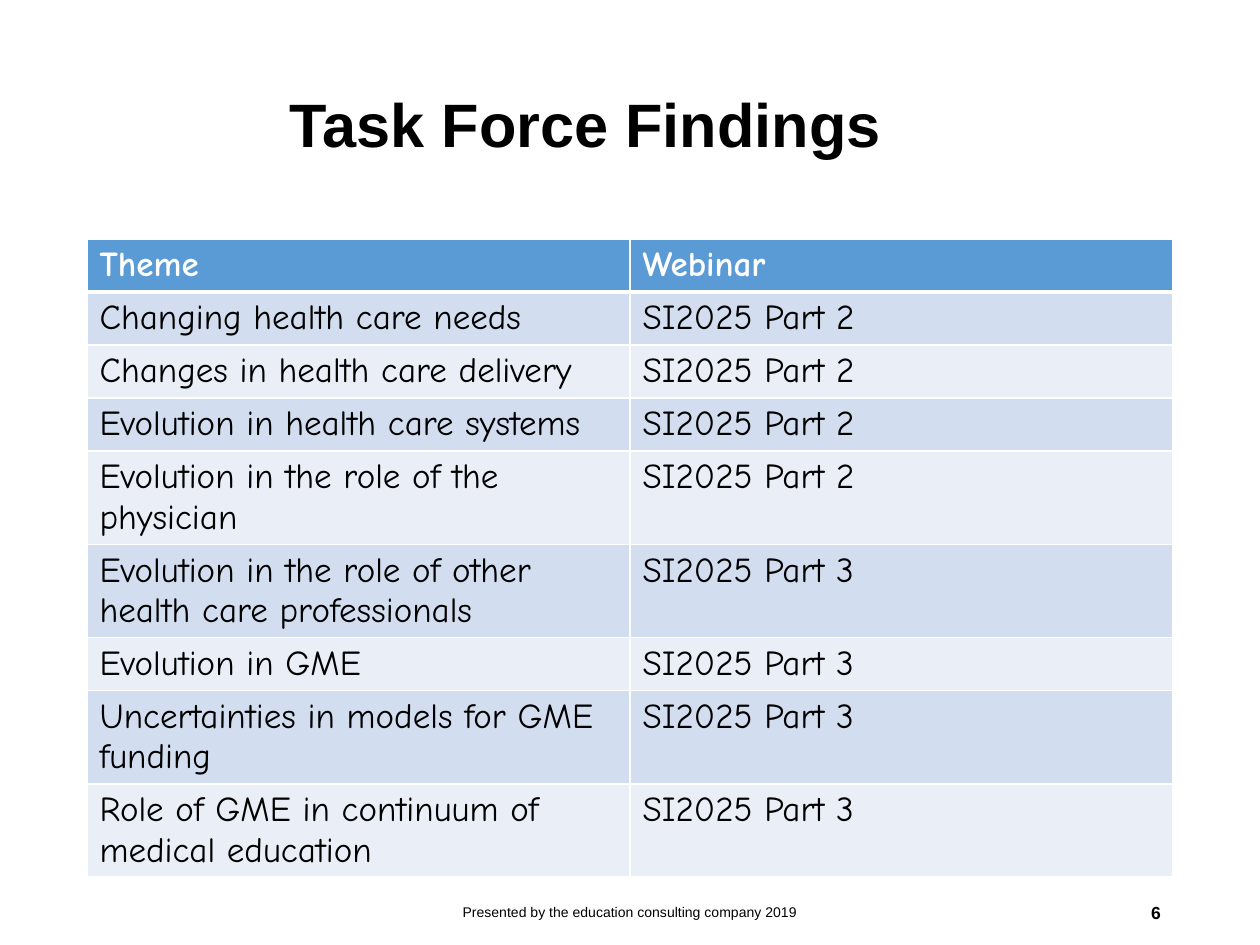
"""Build the Task Force Findings slide."""
from dataclasses import dataclass

from lxml.etree import SubElement
from pptx import Presentation
from pptx.dml.color import RGBColor
from pptx.enum.text import MSO_ANCHOR, PP_ALIGN
from pptx.oxml.ns import qn
from pptx.util import Inches, Pt

WIDTH, HEIGHT = Inches(10), Inches(7.5)


@dataclass(frozen=True)
class Theme:
    """Colours, fonts and type sizes of the slide."""
    ink: str = "000000"
    paper: str = "FFFFFF"
    header: str = "5B9BD5"
    bands: tuple = ("D2DEEF", "EAEFF7")
    heading_font: str = "Arial"
    table_font: str = "Comic Neue"
    title_size: int = 35
    table_size: int = 20
    footer_size: int = 8
    number_size: int = 10
    rule: int = 1
    header_rule: int = 3


THEME = Theme()

FINDINGS = [
    ("Theme", "Webinar"),
    ("Changing health care needs", "SI2025 Part 2"),
    ("Changes in health care delivery", "SI2025 Part 2"),
    ("Evolution in health care systems", "SI2025 Part 2"),
    ("Evolution in the role of the physician", "SI2025 Part 2"),
    ("Evolution in the role of other health care professionals", "SI2025 Part 3"),
    ("Evolution in GME", "SI2025 Part 3"),
    ("Uncertainties in models for GME funding", "SI2025 Part 3"),
    ("Role of GME in continuum of medical education", "SI2025 Part 3"),
]


def share(left, top, width, height):
    """Turn shares of the slide's size into lengths."""
    return (int(WIDTH * left), int(HEIGHT * top),
            int(WIDTH * width), int(HEIGHT * height))


def write(frame, wording, font_name, size, color, bold=False, align=PP_ALIGN.LEFT):
    """Set one formatted paragraph in a text frame."""
    frame.text = wording
    paragraph = frame.paragraphs[0]
    paragraph.alignment = align
    font = paragraph.runs[0].font
    font.name, font.size, font.bold = font_name, Pt(size), bold
    font.color.rgb = RGBColor.from_string(color)


def add_title(slide, wording):
    """Move and format the title placeholder."""
    title = slide.shapes.title
    title.left, title.top, title.width, title.height = share(0.22, 0.04, 0.71, 0.19)
    write(title.text_frame, wording, THEME.heading_font, THEME.title_size,
          THEME.ink, bold=True)
    title.text_frame.vertical_anchor = MSO_ANCHOR.MIDDLE
    title.text_frame.paragraphs[0].line_spacing = 0.9


def add_borders(cell, top, bottom):
    """Rule the four sides of a cell, with its own top and bottom weights."""
    properties = cell._tc.get_or_add_tcPr()
    weights = {"lnL": THEME.rule, "lnR": THEME.rule, "lnT": top, "lnB": bottom}
    for side, weight in weights.items():
        border = SubElement(properties, qn(f"a:{side}"), w=str(Pt(weight)))
        fill = SubElement(border, qn("a:solidFill"))
        SubElement(fill, qn("a:srgbClr"), val=THEME.paper)


def format_cell(cell, wording, row):
    """Write, rule and fill one cell according to its row."""
    is_header = row == 0
    write(cell.text_frame, wording, THEME.table_font, THEME.table_size,
          THEME.paper if is_header else THEME.ink, bold=is_header)
    add_borders(cell, THEME.header_rule if row == 1 else THEME.rule,
                THEME.header_rule if is_header else THEME.rule)
    band = THEME.header if is_header else THEME.bands[(row - 1) % 2]
    cell.fill.solid()
    cell.fill.fore_color.rgb = RGBColor.from_string(band)


def add_findings(slide, findings):
    """Add the table of themes and webinars."""
    left, top, width, row_height = share(0.069, 0.253, 0.862, 0.055)
    table = slide.shapes.add_table(len(findings), len(findings[0]), left, top,
                                   width, row_height * len(findings)).table
    for row, finding in enumerate(findings):
        for column, wording in enumerate(finding):
            format_cell(table.cell(row, column), wording, row)


def add_footer(slide, wording, left, width, size, align, bold=False):
    """Add one text box on the footer line."""
    box = slide.shapes.add_textbox(*share(left, 0.939, width, 0.053))
    box.text_frame.word_wrap = True
    box.text_frame.vertical_anchor = MSO_ANCHOR.MIDDLE
    write(box.text_frame, wording, THEME.heading_font, size, THEME.ink, bold, align)


def main():
    """Assemble and save the slide."""
    deck = Presentation()
    deck.slide_width, deck.slide_height = WIDTH, HEIGHT
    slide = deck.slides.add_slide(deck.slide_layouts.get_by_name("Title Only"))
    add_findings(slide, FINDINGS)
    add_title(slide, "Task Force Findings")
    add_footer(slide, "Presented by the education consulting company 2019",
               0.331, 0.338, THEME.footer_size, PP_ALIGN.CENTER)
    add_footer(slide, "6", 0.706, 0.225, THEME.number_size, PP_ALIGN.RIGHT, bold=True)
    deck.save("out.pptx")


if __name__ == "__main__":
    main()
